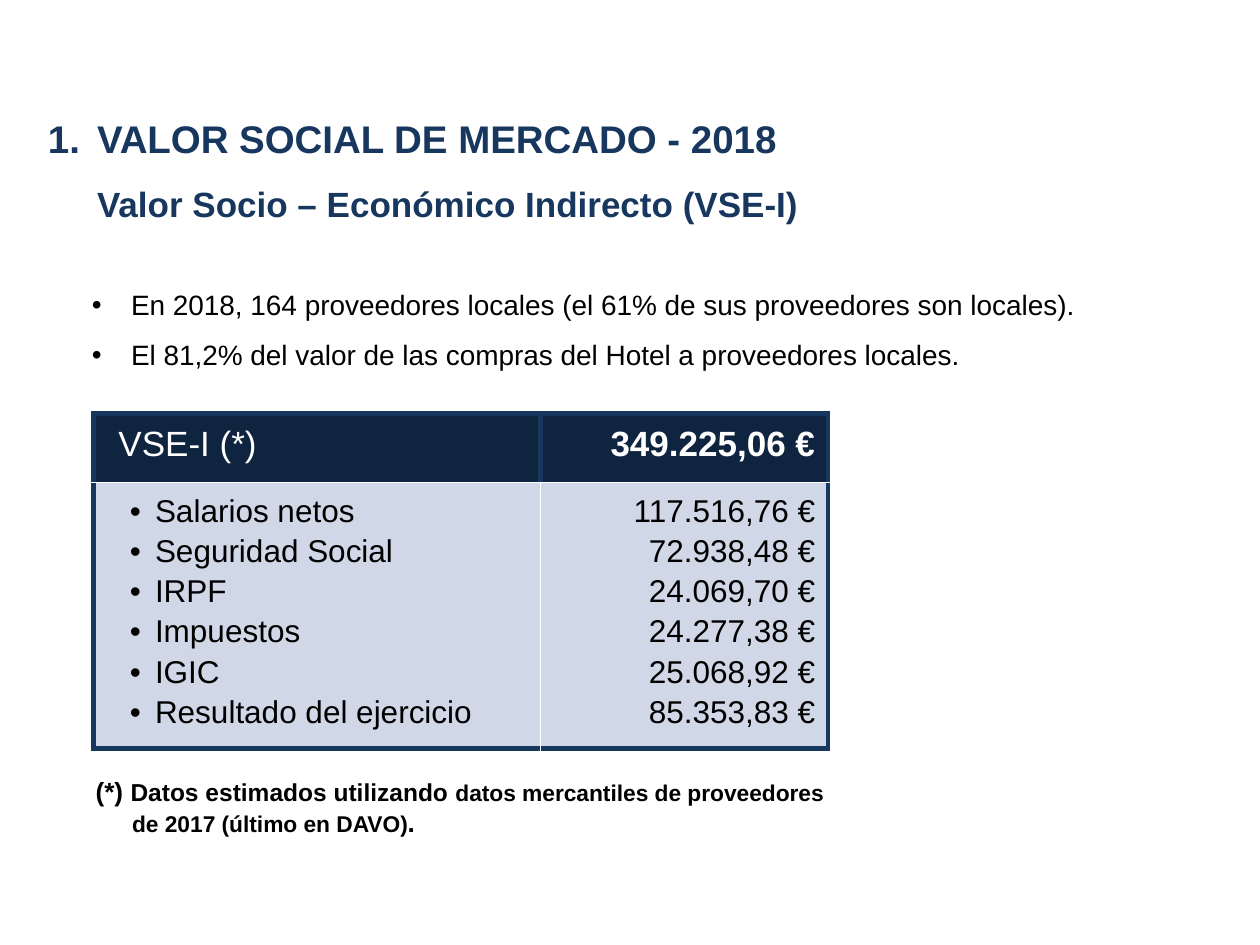
import pptx
import pptx.util
import pptx.dml.color
import pptx.enum.text
import pptx.oxml
import pptx.oxml.ns

Inches, Pt = pptx.util.Inches, pptx.util.Pt
ALIGN = pptx.enum.text.PP_ALIGN
FONT = "Arial"
COLORS = {"navy": "17375E", "header": "0F243E", "body": "D0D8E8",
          "white": "FFFFFF", "black": "000000"}

TITLE = "VALOR SOCIAL DE MERCADO - 2018"
SUBTITLE = "Valor Socio – Económico Indirecto (VSE-I)"
POINTS = [
    "En 2018, 164 proveedores locales (el 61% de sus proveedores son locales).",
    "El 81,2% del valor de las compras del Hotel a proveedores locales.",
]
TOTAL = ("VSE-I (*)", "349.225,06 €")
ITEMS = [
    ("Salarios netos", "117.516,76 €"),
    ("Seguridad Social", "72.938,48 €"),
    ("IRPF", "24.069,70 €"),
    ("Impuestos", "24.277,38 €"),
    ("IGIC", "25.068,92 €"),
    ("Resultado del ejercicio", "85.353,83 €"),
]
FOOTNOTE = [
    ("(*) ", 15),
    ("Datos estimados utilizando ", 14),
    ("datos mercantiles de proveedores de 2017 (último en DAVO)", 13),
    (".", 15),
]
COLUMN_WIDTHS, ROW_HEIGHTS = (3.55, 2.28), (0.55, 2.11)

DOT = '<a:buChar {} char="•"/>'
NUMBER = '<a:buAutoNum {} type="arabicPeriod"/>'
NO_BULLET = "<a:buNone {}/>"
BULLET_FONT = f'<a:buFont {{}} typeface="{FONT}"/>'
THICK, THIN = ("navy", 3), ("white", 1)
# Borders in the order left, right, top, bottom
BORDERS = [
    [(THICK, THICK, THICK, THIN), (THICK, THICK, THICK, THIN)],
    [(THICK, THIN, THIN, THICK), (THIN, THICK, THIN, THICK)],
]


def xml_element(template):
    return pptx.oxml.parse_xml(template.format(pptx.oxml.ns.nsdecls("a")))


def place(shape, left, top, width, height):
    for name, value in dict(left=left, top=top, width=width, height=height).items():
        setattr(shape, name, Inches(value))
    frame = shape.text_frame
    for name, value in dict(word_wrap=True, vertical_anchor=pptx.enum.text.MSO_ANCHOR.TOP,
                            auto_size=pptx.enum.text.MSO_AUTO_SIZE.NONE).items():
        setattr(frame, name, value)
    return frame


def write(frame, lines, color, bold=False, align=ALIGN.LEFT, spacing=1.0):
    """Fill a frame; each line is (runs, left margin, indent, bullet), runs being (text, size)."""
    for index, (runs, margin, indent, bullet) in enumerate(lines):
        para = frame.paragraphs[0] if index == 0 else frame.add_paragraph()
        for name, value in dict(alignment=align, line_spacing=spacing,
                                space_before=Pt(0), space_after=Pt(0)).items():
            setattr(para, name, value)
        properties = para._p.get_or_add_pPr()
        properties.set("marL", str(Inches(margin)))
        properties.set("indent", str(Inches(indent)))
        properties.append(xml_element(BULLET_FONT))
        properties.append(xml_element(bullet))
        for text, size in runs:
            span = para.add_run()
            span.text = text
            for name, value in dict(name=FONT, size=Pt(size), bold=bold).items():
                setattr(span.font, name, value)
            span.font.color.rgb = pptx.dml.color.RGBColor.from_string(COLORS[color])


def format_cell(cell, fill, borders):
    cell.fill.solid()
    cell.fill.fore_color.rgb = pptx.dml.color.RGBColor.from_string(COLORS[fill])
    properties = cell._tc.get_or_add_tcPr()
    for index, (side, (color, points)) in enumerate(zip("LRTB", borders)):
        properties.insert(index, xml_element(
            f'<a:ln{side} {{}} w="{Pt(points)}"><a:solidFill>'
            f'<a:srgbClr val="{COLORS[color]}"/></a:solidFill></a:ln{side}>'))


def add_value_table(page):
    table = page.shapes.add_table(2, 2, Inches(0.74), Inches(3.28), Inches(sum(COLUMN_WIDTHS)),
                                  Inches(sum(ROW_HEIGHTS))).table
    for column, width in zip(table.columns, COLUMN_WIDTHS):
        column.width = Inches(width)
    for row, height in zip(table.rows, ROW_HEIGHTS):
        row.height = Inches(height)
    names, amounts = zip(*ITEMS)
    contents = [
        [[([(TOTAL[0], 20)], 0, 0.1, NO_BULLET)],
         [([(TOTAL[1], 20)], 0, 0, NO_BULLET)]],
        [[([(name, 18)], 0.39, -0.2, DOT) for name in names],
         [([(amount, 18)], 0, 0, NO_BULLET) for amount in amounts]],
    ]
    row_colors = [("header", "white"), ("body", "black")]
    for row, (fill, color) in enumerate(row_colors):
        for column, align in enumerate((ALIGN.LEFT, ALIGN.RIGHT)):
            cell = table.cell(row, column)
            write(cell.text_frame, contents[row][column], color,
                  bold=(row, column) == (0, 1), align=align, spacing=1.14)
            format_cell(cell, fill, BORDERS[row][column])


def main():
    deck = pptx.Presentation()
    deck.slide_width, deck.slide_height = Inches(10), Inches(7.5)
    page = deck.slides.add_slide(deck.slide_layouts.get_by_name("Title and Content"))

    write(place(page.shapes.title, 0.28, 0.68, 9.37, 1.1),
          [([(TITLE, 22)], 0.39, -0.39, NUMBER), ([(SUBTITLE, 20)], 0, 0.39, NO_BULLET)],
          "navy", bold=True, spacing=1.5)
    write(place(page.placeholders[1], 0.43, 2.1, 8.78, 0.86),
          [([(point, 16)], 0.51, -0.31, DOT) for point in POINTS], "black", spacing=1.5)
    add_value_table(page)
    note = page.shapes.add_textbox(0, 0, 0, 0)
    write(place(note, 0.46, 6.1, 6.39, 0.61),
          [(FOOTNOTE, 0.49, -0.29, NO_BULLET)], "black", bold=True)

    deck.save("out.pptx")


if __name__ == "__main__":
    main()
